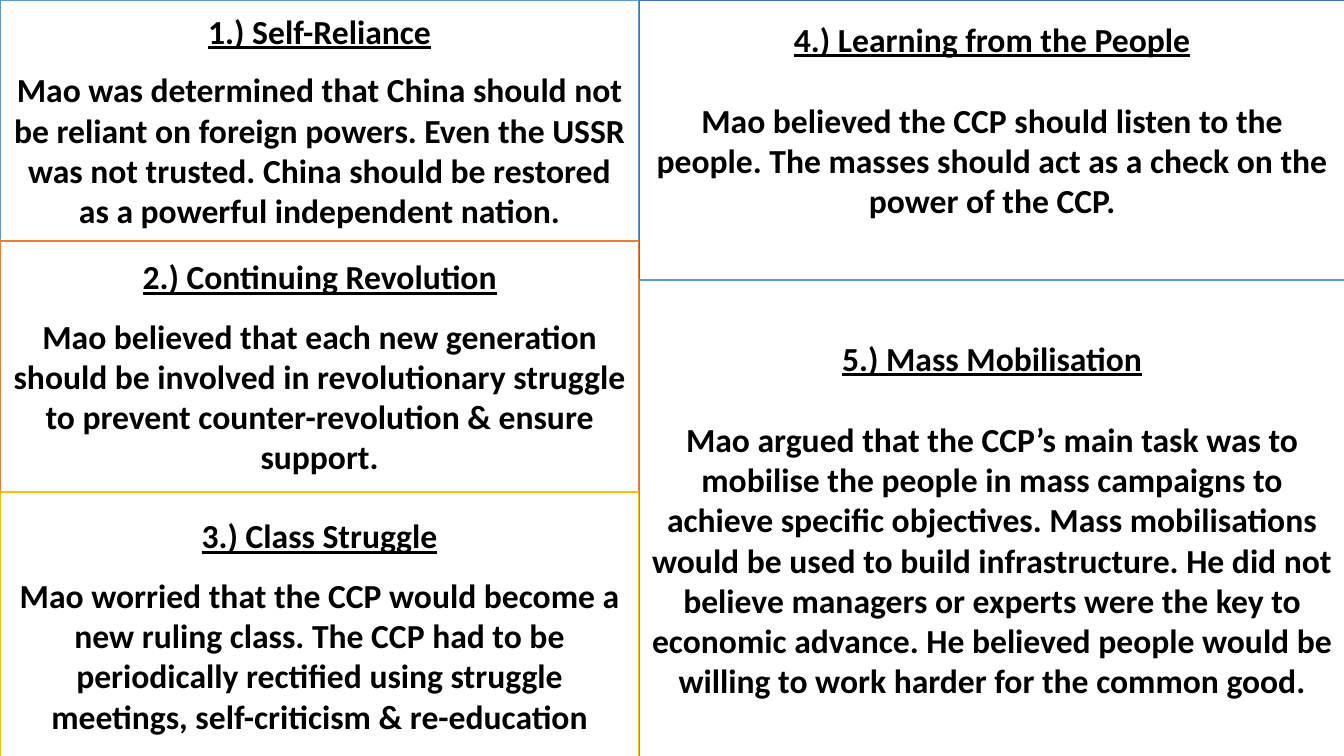
from pptx import Presentation
from pptx.dml.color import RGBColor as RGB
from pptx.enum.shapes import MSO_SHAPE as SHAPE
from pptx.enum.text import MSO_ANCHOR as ANCHOR, PP_ALIGN as ALIGN
from pptx.util import Pt

PX = 9144
WIDTH, HEIGHT = 1333, 750
LEFT_WIDTH, RIGHT_WIDTH = 634, 700

COLORS = {
    "background": "000000",
    "panel": "FFFFFF",
    "text": "000000",
    "blue": "5B9BD5",
    "orange": "ED7D31",
    "gold": "FFC000",
    "navy": "4472C4",
}

LEFT_PANELS = [
    (239, "blue", 13, 5, "1.) Self-Reliance",
     "Mao was determined that China should not be reliant on foreign powers. "
     "Even the USSR was not trusted. China should be restored as a powerful "
     "independent nation."),
    (249, "orange", 13.5, 5, "2.) Continuing Revolution",
     "Mao believed that each new generation should be involved in "
     "revolutionary struggle to prevent counter-revolution & ensure support."),
    (265, "gold", 13.5, 5, "3.) Class Struggle",
     "Mao worried that the CCP would become a new ruling class. The CCP had "
     "to be periodically rectified using struggle meetings, self-criticism "
     "& re-education"),
]
RIGHT_PANELS = [
    (278, "navy", 29, 46, "4.) Learning from the People",
     "Mao believed the CCP should listen to the people. The masses should act "
     "as a check on the power of the CCP."),
    (474, "blue", 29, 5, "5.) Mass Mobilisation",
     "Mao argued that the CCP’s main task was to mobilise the people in mass "
     "campaigns to achieve specific objectives. Mass mobilisations would be "
     "used to build infrastructure. He did not believe managers or experts "
     "were the key to economic advance. He believed people would be willing "
     "to work harder for the common good."),
]


def color(name):
    return RGB.from_string(COLORS[name])


def format_paragraph(p, text, underline):
    p.text = text
    p.alignment = ALIGN.CENTER
    p.font.name = "Calibri"
    p.font.size = Pt(24)
    p.font.bold = True
    p.font.underline = underline
    p.font.color.rgb = color("text")


def add_panel(s, x, y, w, h, line, gap, bottom, heading, body):
    sp = s.shapes.add_shape(SHAPE.RECTANGLE, x * PX, y * PX, w * PX, h * PX)
    sp.shadow.inherit = False
    sp.fill.solid()
    sp.fill.fore_color.rgb = color("panel")
    sp.line.color.rgb = color(line)
    sp.line.width = Pt(1)
    tf = sp.text_frame
    tf.word_wrap = True
    tf.vertical_anchor = ANCHOR.MIDDLE
    tf.margin_bottom = bottom * PX
    format_paragraph(tf.paragraphs[0], heading, True)
    p = tf.add_paragraph()
    format_paragraph(p, body, False)
    p.space_before = Pt(gap)


def add_column(s, x, w, panels):
    y = 0
    for h, *content in panels:
        add_panel(s, x, y, w, h, *content)
        y += h


def main():
    prs = Presentation()
    prs.slide_width = WIDTH * PX
    prs.slide_height = HEIGHT * PX
    s = prs.slides.add_slide(prs.slide_layouts[6])
    s.background.fill.solid()
    s.background.fill.fore_color.rgb = color("background")
    add_column(s, 0, LEFT_WIDTH, LEFT_PANELS)
    add_column(s, LEFT_WIDTH, RIGHT_WIDTH, RIGHT_PANELS)
    prs.save("out.pptx")


if __name__ == "__main__":
    main()
